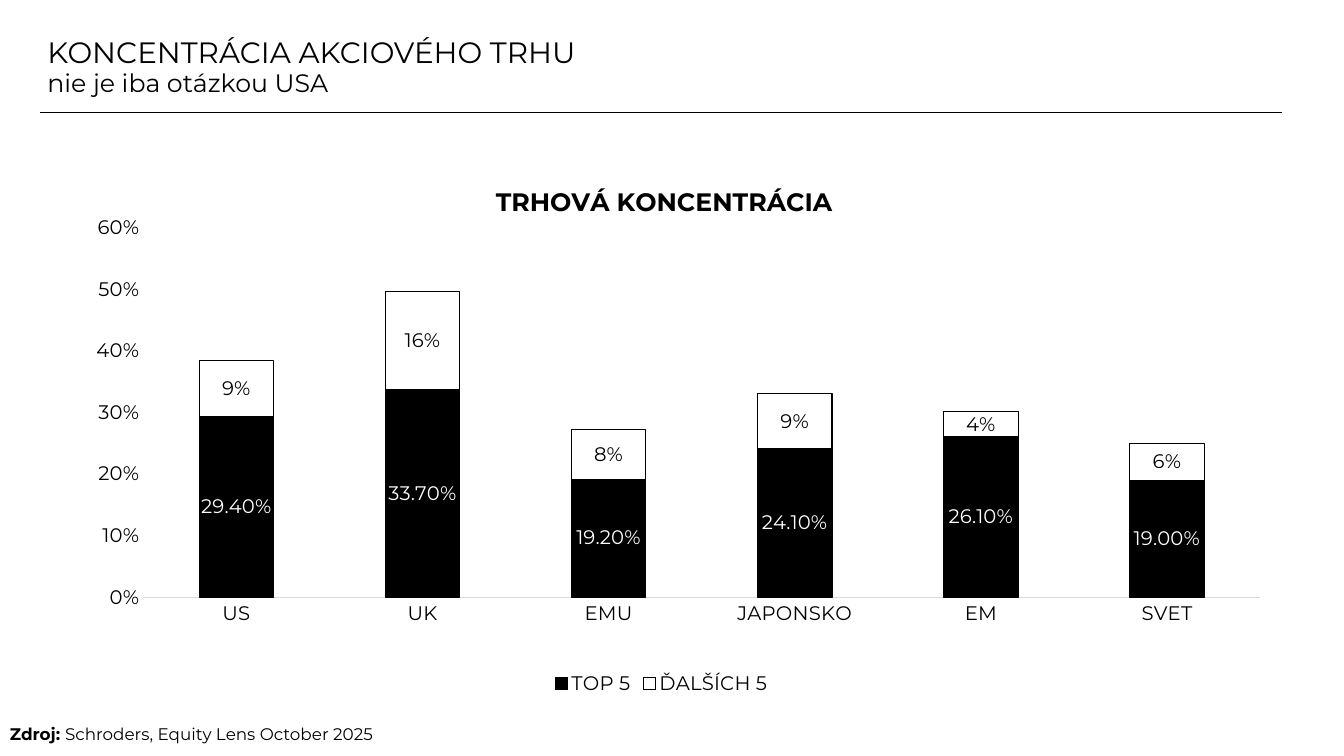
from pptx import Presentation
from pptx import util as u
from pptx.chart import data as chart_data
from pptx.dml import color
from pptx.enum import chart as ch, shapes, text
from pptx.oxml import ns, xmlchemy

BLACK, WHITE, GREY = "000000", "FFFFFF", "D9D9D9"
LEFT, WIDTH = u.Inches(0.4), u.Inches(12.32)
RULE_Y = u.Inches(1.11)


def style(font, size, hue=BLACK, bold=False, name="Montserrat"):
    font.size, font.bold, font.name = u.Pt(size), bold, name
    font.color.rgb = color.RGBColor.from_string(hue)


def place(parent, index, **settings):
    """Give a chart part a manual layout, as shares of the chart's size."""
    for old in parent.findall(ns.qn("c:layout")):
        parent.remove(old)
    layout = xmlchemy.OxmlElement("c:layout")
    manual = xmlchemy.OxmlElement("c:manualLayout")
    layout.append(manual)
    for tag, value in settings.items():
        item = xmlchemy.OxmlElement(f"c:{tag}")
        item.set("val", str(value))
        manual.append(item)
    parent.insert(index, layout)


prs = Presentation()
prs.slide_width, prs.slide_height = u.Inches(13.33), u.Inches(7.5)
slide = prs.slides.add_slide(prs.slide_layouts[5])

# Heading and the rule below it
heading = slide.shapes.title
heading.left, heading.top = LEFT, u.Inches(0.31)
heading.width, heading.height = WIDTH, u.Inches(0.73)
frame = heading.text_frame
frame.auto_size = text.MSO_AUTO_SIZE.NONE
frame.vertical_anchor = text.MSO_ANCHOR.MIDDLE
frame.margin_left = frame.margin_right = u.Inches(0.07)
frame.margin_top = frame.margin_bottom = u.Inches(0.04)
frame.text = "KONCENTRÁCIA AKCIOVÉHO TRHU\nnie je iba otázkou USA"
for line, size in zip(frame.paragraphs, (21, 18)):
    line.alignment, line.line_spacing = text.PP_ALIGN.LEFT, 0.9
    style(line.runs[0].font, size)

rule = slide.shapes.add_connector(
    shapes.MSO_CONNECTOR.STRAIGHT, LEFT, RULE_Y, LEFT + WIDTH, RULE_Y)
rule.line.width = u.Pt(0.5)
rule.line.color.rgb = color.RGBColor.from_string(BLACK)
rule._element.spPr.append(xmlchemy.OxmlElement("a:effectLst"))

# Market concentration chart
concentration = chart_data.CategoryChartData()
concentration.categories = ["US", "UK", "EMU", "JAPONSKO", "EM", "SVET"]
concentration.add_series("TOP 5", (0.294, 0.337, 0.192, 0.241, 0.261, 0.19))
concentration.add_series("ĎALŠÍCH 5", (0.09, 0.16, 0.08, 0.09, 0.04, 0.06))
chart = slide.shapes.add_chart(
    ch.XL_CHART_TYPE.COLUMN_STACKED, LEFT, u.Inches(1.43), WIDTH, u.Inches(5.51),
    concentration).chart
style(chart.font, 10, name="Calibri")

chart.has_title = True
chart_title = chart.chart_title
chart_title.text_frame.text = "TRHOVÁ KONCENTRÁCIA"
style(chart_title.text_frame.paragraphs[0].runs[0].font, 18, bold=True)
place(chart_title._element, 1, xMode="edge", yMode="edge", x=0.363, y=0.064)
place(chart._chartSpace.chart.plotArea, 0, layoutTarget="inner", xMode="edge",
      yMode="edge", x=0.083, y=0.151, w=0.899, h=0.665)

chart.has_legend = True
chart.legend.position = ch.XL_LEGEND_POSITION.BOTTOM
chart.legend.include_in_layout = False
style(chart.legend.font, 14)

regions, shares = chart.category_axis, chart.value_axis
for axis in (regions, shares):
    axis.has_major_gridlines = False
    axis.major_tick_mark = axis.minor_tick_mark = ch.XL_TICK_MARK.NONE
    style(axis.tick_labels.font, 14)
regions.format.line.width = u.Pt(0.75)
regions.format.line.color.rgb = color.RGBColor.from_string(GREY)
shares.format.line.fill.background()
shares.minimum_scale, shares.maximum_scale, shares.major_unit = 0, 0.6, 0.1
shares.tick_labels.number_format = "0%"
shares.tick_labels.number_format_is_linked = False

plot = chart.plots[0]
plot.gap_width, plot.overlap, plot.vary_by_categories = 150, 100, False
for series, hue, number_format in zip(plot.series, (WHITE, BLACK), ("0.00%", "0%")):
    series.format.line.width = u.Pt(0.75)
    series.format.line.color.rgb = color.RGBColor.from_string(BLACK)
    labels = series.data_labels
    labels.show_value = True
    labels.position = ch.XL_LABEL_POSITION.CENTER
    labels.number_format, labels.number_format_is_linked = number_format, False
    style(labels.font, 14, hue)
top_five, next_five = plot.series
top_five.format.fill.solid()
top_five.format.fill.fore_color.rgb = color.RGBColor.from_string(BLACK)
next_five.format.fill.background()

# Source line
source = slide.shapes.add_textbox(0, u.Inches(7.13), u.Inches(8.62), u.Inches(0.3))
source.text_frame.word_wrap = True
source.text_frame.auto_size = text.MSO_AUTO_SIZE.SHAPE_TO_FIT_TEXT
citation = source.text_frame.paragraphs[0]
citation.alignment = text.PP_ALIGN.JUSTIFY
for words, bold in (("Zdroj: ", True), ("Schroders, Equity Lens October 2025", False)):
    run = citation.add_run()
    run.text = words
    style(run.font, 12, bold=bold)

prs.save("out.pptx")
